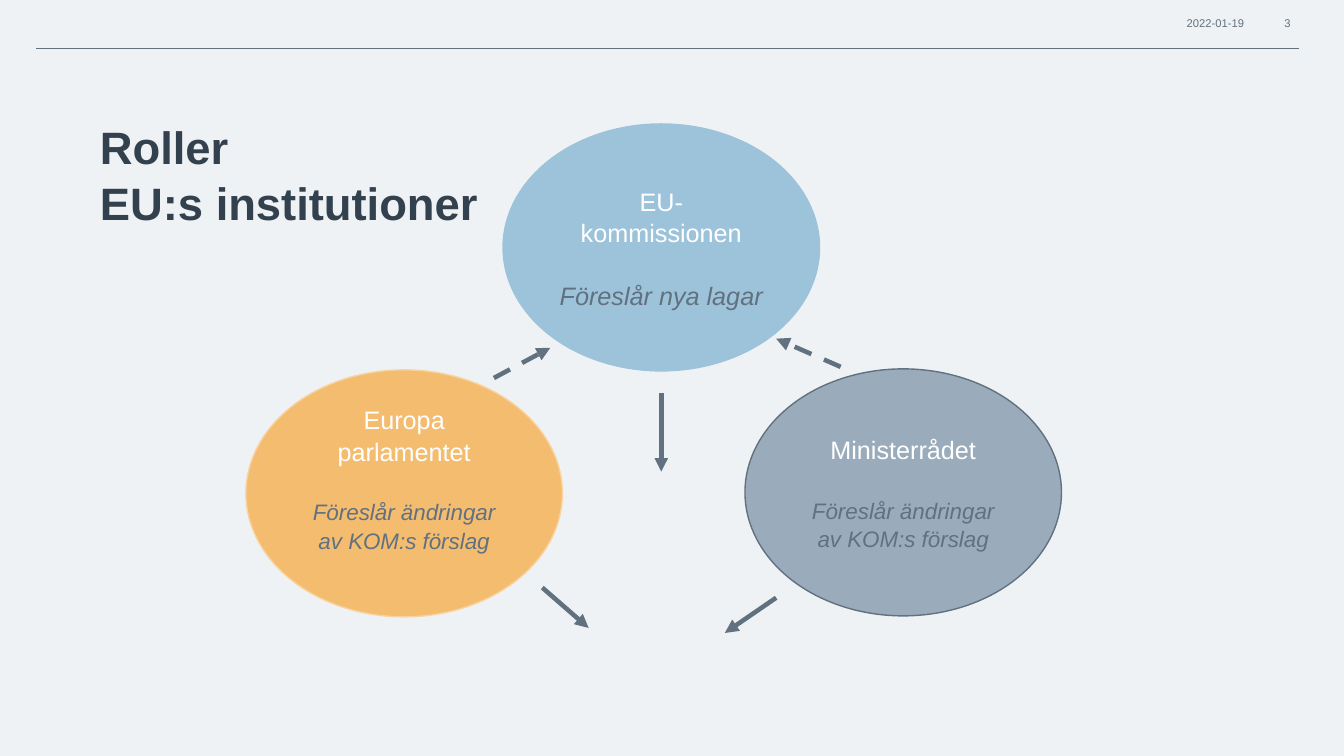
from pptx import Presentation
from pptx import util as u
from pptx.dml.color import RGBColor
from pptx.enum import dml, shapes, text
from pptx.oxml.ns import qn
from lxml import etree

PAPER = RGBColor(0xEF, 0xF2, 0xF5)
SLATE = RGBColor(0x61, 0x71, 0x7F)
INK = RGBColor(0x33, 0x41, 0x4E)
WHITE = RGBColor(0xFF, 0xFF, 0xFF)
BLUE = RGBColor(0x9D, 0xC3, 0xDB)
GREY = RGBColor(0x9A, 0xAC, 0xBB)
ORANGE = RGBColor(0xF4, 0xBC, 0x6F)
PEACH = RGBColor(0xF8, 0xD2, 0x9F)

prs = Presentation()
prs.slide_width, prs.slide_height = u.Inches(13.33), u.Inches(7.5)
COL, ROW = prs.slide_width / 100, prs.slide_height / 100
s = prs.slides.add_slide(prs.slide_layouts[5])
s.background.fill.solid()
s.background.fill.fore_color.rgb = PAPER


def grid(*cells):
    return [round(c * (ROW if i % 2 else COL)) for i, c in enumerate(cells)]


def write(p, words, align, color, **font):
    p.alignment = align
    p.text = words
    p.font.color.rgb = color
    for name, value in {"name": "Arial", **font}.items():
        setattr(p.font, name, value)


LEFT, CENTER, RIGHT = text.PP_ALIGN.LEFT, text.PP_ALIGN.CENTER, text.PP_ALIGN.RIGHT
MIDDLE = text.MSO_ANCHOR.MIDDLE

title = s.shapes.title
title.left, title.top, title.width, title.height = grid(6.68, 18.53, 56.55, 8.8)
tf = title.text_frame
tf.auto_size, tf.vertical_anchor = text.MSO_AUTO_SIZE.NONE, MIDDLE
write(tf.paragraphs[0], "Roller \vEU:s institutioner", LEFT, INK, size=u.Pt(32.4), bold=True)
tf.paragraphs[0].line_spacing = 1.04

for words, box in [
    ("2022-01-19", (86.33, 1.6, 6.98, 2.93)),
    ("3", (93.98, 1.73, 2.78, 2.67)),
]:
    tf = s.shapes.add_textbox(*grid(*box)).text_frame
    tf.word_wrap, tf.vertical_anchor = True, MIDDLE
    write(tf.paragraphs[0], words, RIGHT, SLATE, size=u.Pt(8))

CHANGES = "Föreslår ändringar av KOM:s förslag"
for name, role, size, corner, fill, line, lift in [
    ("EU-kommissionen", "Föreslår nya lagar", 18, (37.43, 16.4), BLUE, BLUE, 0),
    ("Ministerrådet", CHANGES, 16, (55.43, 48.8), GREY, SLATE, 0),
    ("Europa parlamentet", CHANGES, 16, (18.3, 48.93), ORANGE, PEACH, 4),
]:
    sp = s.shapes.add_shape(shapes.MSO_SHAPE.OVAL, *grid(*corner, 23.55, 32.67))
    sp.shadow.inherit = False
    sp.fill.solid()
    sp.fill.fore_color.rgb = fill
    sp.line.color.rgb = line
    sp.line.width = u.Pt(1)
    tf = sp.text_frame
    tf.word_wrap, tf.vertical_anchor = True, MIDDLE
    tf.margin_bottom += round(lift * ROW)
    write(tf.paragraphs[0], name, CENTER, WHITE, size=u.Pt(18))
    p = tf.add_paragraph()
    write(p, role, CENTER, SLATE, size=u.Pt(size), italic=True)
    p.space_before = u.Pt(22)
    for p in tf.paragraphs:
        p.line_spacing = 1.05

for ends, width, dashed, arrow in [
    ((2.7, 6.4, 96.68, 6.4), 0.5, False, False),
    ((36.75, 50, 40.95, 46), 3.25, True, True),
    ((62.55, 48.53, 57.75, 44.8), 3.25, True, True),
    ((49.2, 52, 49.2, 62.4), 3.25, False, True),
    ((40.35, 77.73, 43.8, 83.07), 3.25, False, True),
    ((57.75, 79.07, 53.93, 83.73), 3.25, False, True),
]:
    c = s.shapes.add_connector(shapes.MSO_CONNECTOR.STRAIGHT, *grid(*ends))
    c.line.color.rgb = SLATE
    c.line.width = u.Pt(width)
    if dashed:
        c.line.dash_style = dml.MSO_LINE.DASH
    spPr = c._element.spPr
    if arrow:
        etree.SubElement(spPr.find(qn("a:ln")), qn("a:tailEnd"), type="triangle")
    etree.SubElement(spPr, qn("a:effectLst"))

prs.save("out.pptx")
